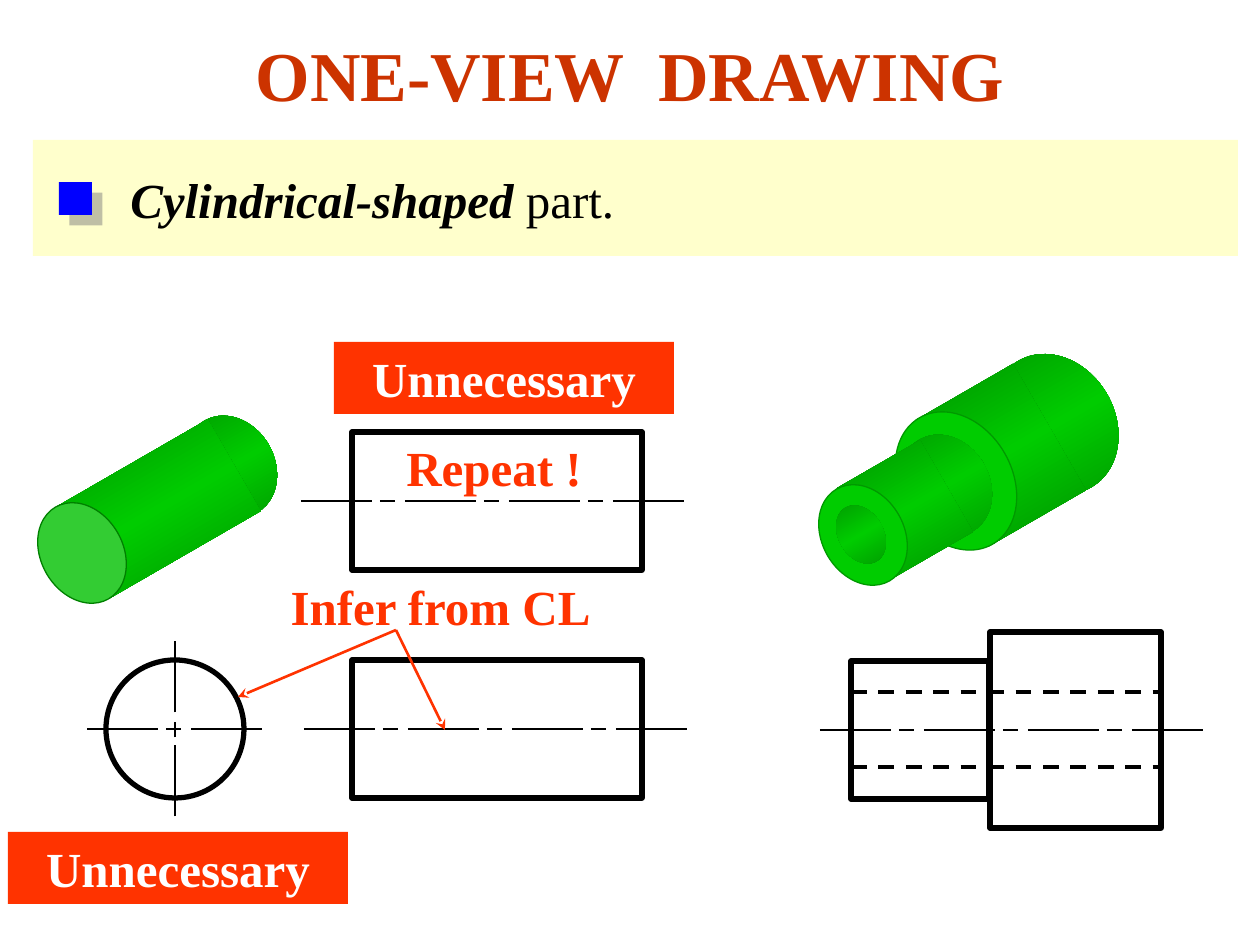
import copy

import pptx
import pptx.dml.color
import pptx.enum.dml
import pptx.enum.shapes
import pptx.enum.text
import pptx.oxml
import pptx.oxml.ns
import pptx.util

SCALE = 914400 / 126
FONT = "Times New Roman"
C = {
    "title": "CC3300", "banner": "FFFFCC", "bullet": "0000FF", "shadow": "808080",
    "black": "000000", "white": "FFFFFF", "red": "FF3300",
    "dark": "009200", "green": "00CC00", "light": "33CC33",
    "light_edge": "008000", "green_edge": "009900",
}
SHAPE = pptx.enum.shapes.MSO_SHAPE
ALIGN = pptx.enum.text.PP_ALIGN
SHADED = "shaded"
LONG, PITCH, SHORT_AT, SHORT = 71, 104, 79, 15


def px(n):
    return pptx.util.Emu(round(n * SCALE))


def rgb(name):
    return pptx.dml.color.RGBColor.from_string(C[name])


def xml(tag, attrs, inner=""):
    ns = pptx.oxml.ns.nsdecls("a")
    return pptx.oxml.parse_xml(f"<a:{tag} {ns} {attrs}>{inner}</a:{tag}>")


def shade(fill, angle):
    fill.gradient()
    fill.gradient_angle = angle
    first = fill.gradient_stops[0].color
    first.rgb = rgb("dark")
    stops = fill._fill._gradFill.gsLst
    while len(stops) > 1:
        stops.remove(stops[-1])
    for _ in range(2):
        stops.append(copy.deepcopy(stops[0]))
    for stop, pos, name in zip(fill.gradient_stops, (0, 0.5, 1), ("dark", "green", "dark")):
        stop.position = pos
        stop.color.rgb = rgb(name)


def add_shape(s, kind, x, y, w, h, fill=None, edge=None, weight=3, turn=0):
    sp = s.shapes.add_shape(kind, px(x), px(y), px(w), px(h))
    sp.shadow.inherit = False
    sp.rotation = turn
    if fill == SHADED:
        shade(sp.fill, 0 if kind == SHAPE.OVAL else 90)
    elif fill:
        sp.fill.solid()
        sp.fill.fore_color.rgb = rgb(fill)
    else:
        sp.fill.background()
    if edge:
        sp.line.color.rgb = rgb(edge)
        sp.line.width = pptx.util.Pt(weight)
    else:
        sp.line.fill.background()
    return sp


def add_line(s, x1, y1, x2, y2, color="black", weight=1, dash=False, arrow=False):
    line = s.shapes.add_connector(
        pptx.enum.shapes.MSO_CONNECTOR.STRAIGHT, px(x1), px(y1), px(x2), px(y2))
    line.line.color.rgb = rgb(color)
    line.line.width = pptx.util.Pt(weight)
    if dash:
        line.line.dash_style = pptx.enum.dml.MSO_LINE.DASH
    if arrow:
        line.line._get_or_add_ln().append(xml("tailEnd", 'type="stealth"'))
    line._element.spPr.append(xml("effectLst", ""))


def write(sp, runs, size, color, align=ALIGN.CENTER, side=0, wrap=True):
    tf = sp.text_frame
    tf.word_wrap = wrap
    tf.vertical_anchor = pptx.enum.text.MSO_ANCHOR.TOP
    tf.margin_left = tf.margin_right = pptx.util.Inches(side)
    p = tf.paragraphs[0]
    p.alignment = align
    p.font.name = FONT
    p.font.size = pptx.util.Pt(size)
    p.font.color.rgb = rgb(color)
    for text, bold, italic in runs:
        r = p.add_run()
        r.text = text
        r.font.bold = bold
        r.font.italic = italic


def text_box(s, x, y, w, h, *args, **kwargs):
    write(s.shapes.add_textbox(px(x), px(y), px(w), px(h)), *args, **kwargs)


def title(s, x, y, w, h):
    text_box(s, x, y, w, h, [("ONE-VIEW  DRAWING", True, False)], 40, "title", side=0.1)


def banner(s, x, y, w, h):
    add_shape(s, SHAPE.RECTANGLE, x, y, w, h, "banner")
    text_box(s, x + 85, y + 23, 514, 72,
             [("Cylindrical-shaped", True, True), (" part.", False, False)],
             28, "black", ALIGN.LEFT, side=0.1, wrap=False)
    sp = add_shape(s, SHAPE.RECTANGLE, x + 26, y + 42, 33, 33, "bullet")
    color = f'<a:srgbClr val="{C["shadow"]}"><a:alpha val="50000"/></a:srgbClr>'
    effects = sp._element.spPr.find(pptx.oxml.ns.qn("a:effectLst"))
    effects.append(xml("outerShdw", 'dist="107950" dir="2700000" algn="ctr" rotWithShape="0"', color))


def end(s, x, y, w, h, fill=SHADED, edge=None):
    add_shape(s, SHAPE.OVAL, x, y, w, h, fill, edge, 0.75, turn=60)


def body(s, x, y, w, h):
    add_shape(s, SHAPE.RECTANGLE, x, y, w, h, SHADED, turn=330)


def solid_cylinder(s, x, y):
    end(s, x + 149, y, 106, 87)
    body(s, x + 42, y + 33, 175, 106)
    end(s, x, y + 89, 106, 82, "light", "light_edge")


def stepped_cylinder(s, x, y):
    end(s, x + 172, y, 146, 120)
    body(s, x + 135, y + 18, 112, 146)
    end(s, x + 73, y + 61, 146, 112, "green", "green_edge")
    end(s, x + 83, y + 78, 106, 87)
    body(s, x + 47, y + 93, 96, 106)
    end(s, x, y + 130, 106, 82, "green", "green_edge")
    end(s, x + 20, y + 148, 62, 45)


def center_line(s, x, y, longs, upright=False):
    dashes = [(i * PITCH, LONG) for i in range(longs)]
    dashes += [(i * PITCH + SHORT_AT, SHORT) for i in range(longs - 1)]
    for start, length in sorted(dashes):
        if upright:
            add_line(s, x, y - start, x, y - start - length)
        else:
            add_line(s, x + start, y, x + start + length, y)


def side_view(s, x, y, w, h, overhang):
    add_shape(s, SHAPE.RECTANGLE, x, y, w, h, edge="black")
    center_line(s, x - overhang, y + h / 2, 4)


def end_view(s, x, y, d):
    add_shape(s, SHAPE.OVAL, x, y, d, d, edge="black")
    mid, reach = d / 2, (PITCH + LONG) / 2
    center_line(s, x + mid - reach, y + mid, 2)
    center_line(s, x + mid, y + mid + reach, 2, upright=True)


def stepped_view(s, x, y, w, h):
    small = 138
    add_shape(s, SHAPE.RECTANGLE, x, y + (h - small) / 2, small, small, edge="black")
    center_line(s, x - 31, y + h / 2, 4)
    add_shape(s, SHAPE.RECTANGLE, x + small + 1, y, w - small - 1, h, edge="black")
    for offset in (-38, 37):
        level = y + h / 2 + offset
        add_line(s, x, level, x + w, level, weight=2.25, dash=True)


def label(s, x, y, w, h):
    sp = add_shape(s, SHAPE.RECTANGLE, x, y, w, h, "red")
    write(sp, [("Unnecessary", True, False)], 28, "white")


def remark(s, x, y, w, h, text, targets=()):
    text_box(s, x, y, w, h, [(text, True, False)], 28, "red")
    for dx, dy in targets:
        add_line(s, x + 138, y + 60, x + dx, y + dy, "red", 1.5, arrow=True)


def main():
    prs = pptx.Presentation()
    prs.slide_width, prs.slide_height = px(1260), px(945)
    s = prs.slides.add_slide(prs.slide_layouts[6])
    banner(s, 33, 140, 1205, 116)
    solid_cylinder(s, 29, 423)
    title(s, 0, 25, 1260, 97)
    side_view(s, 352, 432, 290, 138, overhang=51)
    side_view(s, 352, 660, 290, 138, overhang=48)
    end_view(s, 106, 660, 138)
    label(s, 334, 342, 340, 72)
    stepped_cylinder(s, 810, 364)
    stepped_view(s, 851, 632, 310, 196)
    remark(s, 383, 431, 222, 72, "Repeat !")
    label(s, 8, 832, 340, 72)
    remark(s, 258, 570, 365, 72, "Infer from CL", [(187, 160), (-20, 127)])
    prs.save("out.pptx")


if __name__ == "__main__":
    main()
